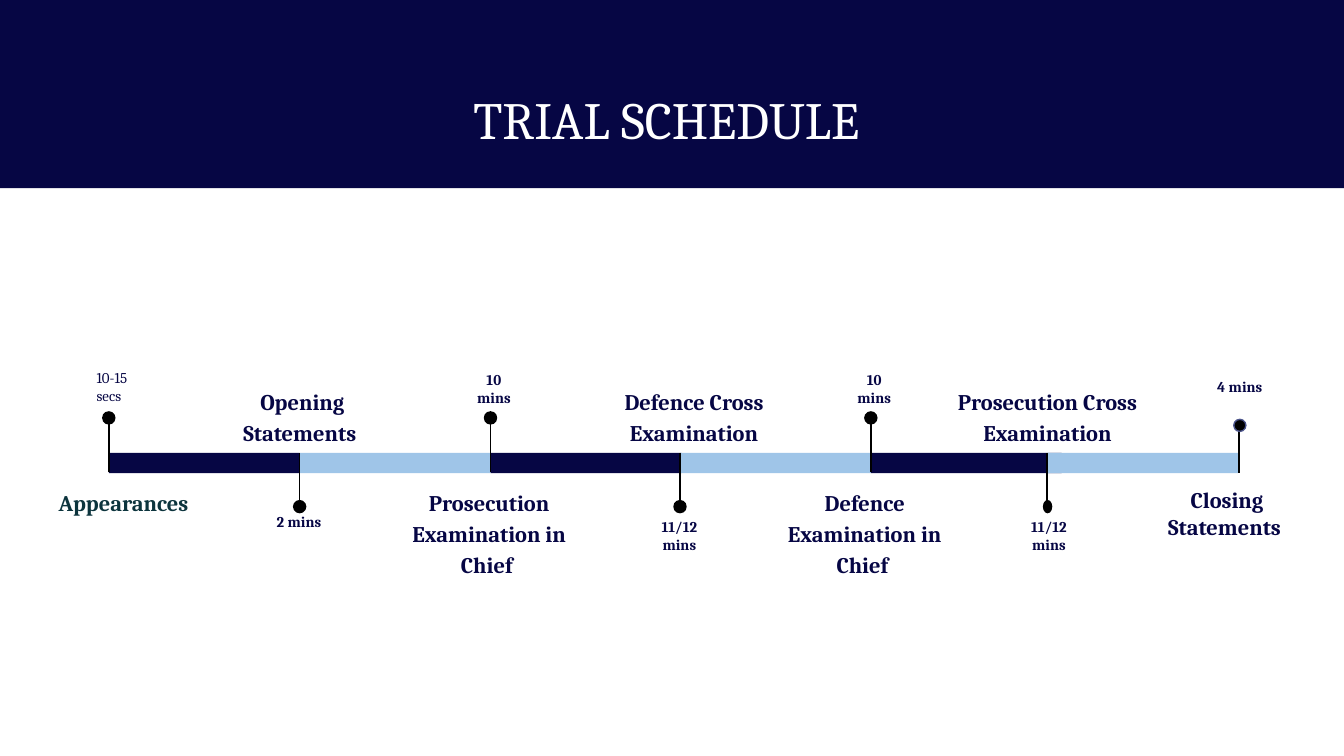
from collections import namedtuple

from lxml import etree
from pptx import Presentation
from pptx import util as u
from pptx.dml.color import RGBColor
from pptx.enum import shapes, text
from pptx.oxml import ns

SCALE = 9144
FONT = "Cambria"
NAVY, SKY, BLACK, WHITE, TEAL = "060644", "9FC5E8", "000000", "FFFFFF", "0C343D"
BAR_LEFT, BAR_TOP, BAR_WIDTH, BAR_HEIGHT = 81, 337, 142, 15
BAR_STEP = 141.75

Stage = namedtuple("Stage", "name name_left name_width time time_left time_top")
STAGES = [
    Stage("Appearances", 24, 136, "10-15 secs", 62, 264),
    Stage("Opening Statements ", 150, 150, "2 mins", 195, 375),
    Stage("Prosecution Examination in Chief ", 293, 142, "10 mins", 340, 266),
    Stage("Defence Cross Examination", 443, 147, "11/12 mins", 478, 375),
    Stage("Defence Examination in Chief ", 567, 153, "10 mins", 623, 266),
    Stage("Prosecution Cross Examination", 693, 173, "11/12 mins", 753, 375),
]


def px(length):
    return u.Emu(length * SCALE)


def color(value):
    return RGBColor.from_string(value)


def add_block(slide, kind, left, top, width, height, fill, outline=None):
    block = slide.shapes.add_shape(kind, px(left), px(top), px(width), px(height))
    block.shadow.inherit = False
    block.fill.solid()
    block.fill.fore_color.rgb = color(fill)
    if outline:
        block.line.color.rgb = color(outline)
        block.line.width = u.Pt(0.75)
    else:
        block.line.fill.background()
    return block


def add_stem(slide, x, start, end):
    stem = slide.shapes.add_connector(
        shapes.MSO_CONNECTOR.STRAIGHT, px(x), px(start), px(x), px(end))
    stem.line.color.rgb = color(BLACK)
    stem.line.width = u.Pt(0.75)
    etree.SubElement(stem.element.spPr, ns.qn("a:effectLst"))


def write(box, words, size, fill, bold=False, centred=True, grow=False):
    frame = box.text_frame
    frame.text = words
    frame.word_wrap = True
    frame.auto_size = (text.MSO_AUTO_SIZE.SHAPE_TO_FIT_TEXT if grow
                       else text.MSO_AUTO_SIZE.NONE)
    frame.vertical_anchor = text.MSO_ANCHOR.TOP
    frame.margin_left = frame.margin_right = px(10)
    frame.margin_top = frame.margin_bottom = px(10)
    para = frame.paragraphs[0]
    para.alignment = text.PP_ALIGN.CENTER if centred else text.PP_ALIGN.LEFT
    font = para.runs[0].font
    font.name, font.size, font.bold = FONT, u.Pt(size), bold
    font.color.rgb = color(fill)
    return para


def add_label(slide, words, left, top, width, height, size, fill=NAVY, **style):
    box = slide.shapes.add_textbox(px(left), px(top), px(width), px(height))
    return write(box, words, size, fill, **style)


def add_time(slide, words, left, top, first=False):
    add_label(slide, words, left, top, 55, 47, 8,
              bold=not first, centred=not first, grow=True)


def add_header(slide):
    band = add_block(slide, shapes.MSO_SHAPE.RECTANGLE, 0, 0, 1000, 140, NAVY)
    title = slide.shapes.title
    title.left, title.top, title.width, title.height = px(34), px(55), px(932), px(68)
    write(title, "TRIAL SCHEDULE ", 28, WHITE)
    band.element.addnext(title.element)


def add_stage(slide, index, stage):
    first, last = index == 0, index == len(STAGES) - 1
    raised = index % 2 == 0
    x = 779 if last else BAR_LEFT + round(index * BAR_STEP)
    add_block(slide, shapes.MSO_SHAPE.RECTANGLE, x, BAR_TOP, BAR_WIDTH, BAR_HEIGHT,
              NAVY if raised else SKY)
    if raised:
        add_stem(slide, x, 312, 351)
    else:
        add_stem(slide, x, 376, BAR_TOP)
    dot_width = 7 if last else 10
    add_block(slide, shapes.MSO_SHAPE.OVAL, x - dot_width // 2, 306 if raised else 372,
              dot_width, 10, BLACK)
    para = add_label(slide, stage.name, stage.name_left, 351 if raised else 276,
                     stage.name_width, 41, 12, TEAL if first else NAVY, bold=True)
    para.line_spacing = 1.15
    para.space_after = u.Pt(16)
    add_time(slide, stage.time, stage.time_left, stage.time_top, first)


def add_closing(slide):
    add_stem(slide, 922, 312, 352)
    add_block(slide, shapes.MSO_SHAPE.FLOWCHART_CONNECTOR, 918, 312, 9, 9, BLACK, "4B548B")
    add_label(slide, "Closing Statements ", 850, 352, 126, 61, 12, bold=True, grow=True)
    add_time(slide, "4 mins", 895, 274)


def main():
    deck = Presentation()
    deck.slide_width = px(1000)
    deck.slide_height = deck.slide_width * 9 // 16
    slide = deck.slides.add_slide(deck.slide_layouts[5])
    add_header(slide)
    for index, stage in enumerate(STAGES):
        add_stage(slide, index, stage)
    add_closing(slide)
    deck.save("out.pptx")


if __name__ == "__main__":
    main()
